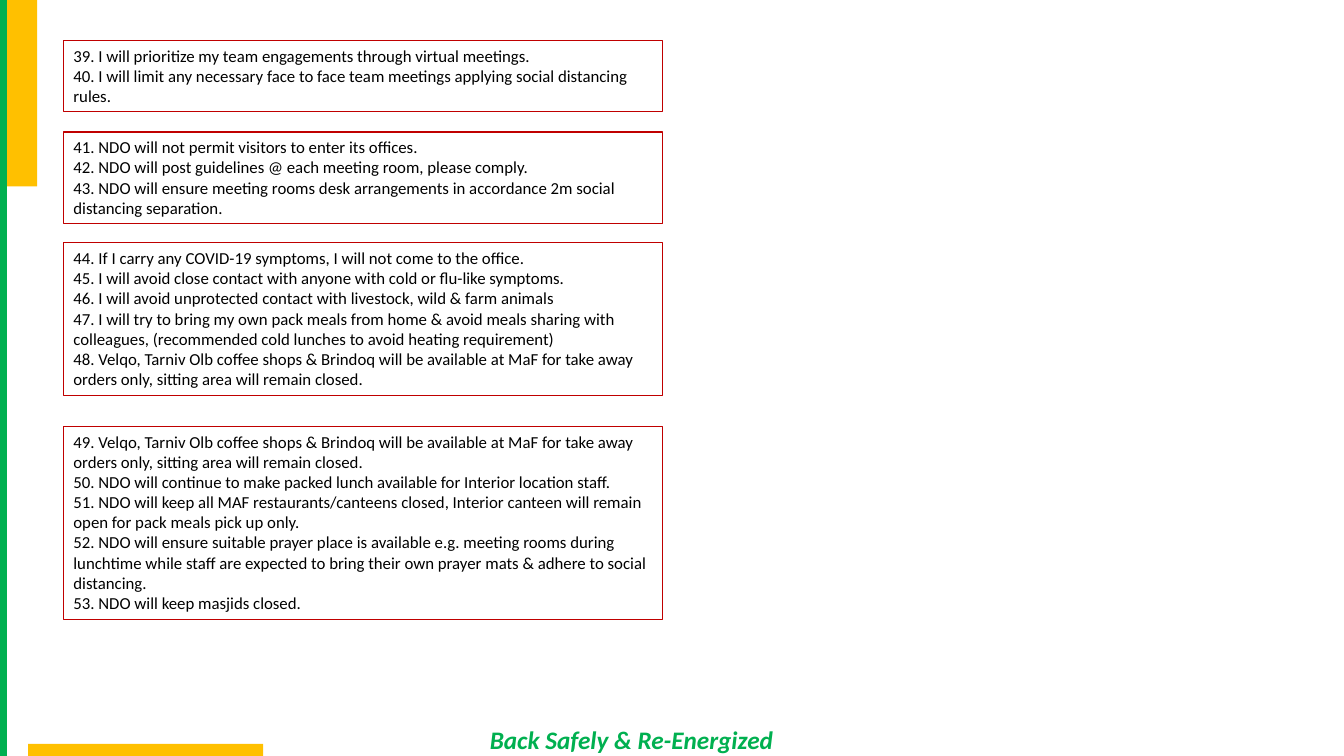
from itertools import count

from pptx import Presentation
from pptx import util as u
from pptx.dml import color
from pptx.enum import shapes, text

COLS, ROWS = 133.3, 75
GREEN, GOLD, RED, BLACK = "00B050", "FFC000", "C00000", "000000"
SHOPS = ("Velqo, Tarniv Olb coffee shops & Brindoq will be available at MaF "
         "for take away orders only, sitting area will remain closed.")
FIRST = 39
RULES = [
    (4, 3, [
        "I will prioritize my team engagements through virtual meetings.",
        "I will limit any necessary face to face team meetings applying "
        "social distancing rules.",
    ]),
    (13.1, 4, [
        "NDO will not permit visitors to enter its offices.",
        "NDO will post guidelines @ each meeting room, please comply.",
        "NDO will ensure meeting rooms desk arrangements in accordance 2m "
        "social distancing separation.",
    ]),
    (24.1, 7, [
        "If I carry any COVID-19 symptoms, I will not come to the office.",
        "I will avoid close contact with anyone with cold or flu-like symptoms.",
        "I will avoid unprotected contact with livestock, wild & farm animals",
        "I will try to bring my own pack meals from home & avoid meals sharing "
        "with colleagues, (recommended cold lunches to avoid heating requirement)",
        SHOPS,
    ]),
    (42.3, 9, [
        SHOPS,
        "NDO will continue to make packed lunch available for Interior "
        "location staff.",
        "NDO will keep all MAF restaurants/canteens closed, Interior canteen "
        "will remain open for pack meals pick up only.",
        "NDO will ensure suitable prayer place is available e.g. meeting rooms "
        "during lunchtime while staff are expected to bring their own prayer "
        "mats & adhere to social distancing.",
        "NDO will keep masjids closed.",
    ]),
]


def rgb(code):
    """Turn a hex string into a colour."""
    return color.RGBColor.from_string(code)


def write(frame, lines, size=12, ink=BLACK, bold=False, italic=False, wrap=True):
    """Fill a text frame with one paragraph per line."""
    frame.word_wrap = wrap
    frame.auto_size = text.MSO_AUTO_SIZE.SHAPE_TO_FIT_TEXT
    frame.vertical_anchor = text.MSO_ANCHOR.TOP
    for i, line in enumerate(lines):
        para = frame.add_paragraph() if i else frame.paragraphs[0]
        para.alignment = text.PP_ALIGN.LEFT
        run = para.add_run()
        run.text = line
        font = run.font
        font.name, font.size = "Calibri", u.Pt(size)
        font.bold, font.italic = bold, italic
        font.color.rgb = rgb(ink)


class Deck:
    """Hold the style and the current slide, measured in columns and rows."""

    def __init__(self):
        """Open a deck with one blank slide."""
        self.prs = Presentation()
        self.prs.slide_width = u.Inches(13.33)
        self.prs.slide_height = u.Inches(7.5)
        self.slide = self.prs.slides.add_slide(self.prs.slide_layouts[6])

    def place(self, col, row, wide, high):
        """Convert grid cells to slide lengths."""
        x = self.prs.slide_width / COLS
        y = self.prs.slide_height / ROWS
        return [round(n) for n in (col * x, row * y, wide * x, high * y)]

    def rect(self, *cell):
        """Add a plain rectangle."""
        shape = self.slide.shapes.add_shape(
            shapes.MSO_SHAPE.RECTANGLE, *self.place(*cell))
        shape.shadow.inherit = False
        return shape

    def bar(self, *cell, fill):
        """Add a solid bar with no outline."""
        bar = self.rect(*cell)
        bar.fill.solid()
        bar.fill.fore_color.rgb = rgb(fill)
        bar.line.fill.background()

    def panel(self, *cell, lines):
        """Add an outlined panel of text."""
        panel = self.rect(*cell)
        panel.fill.background()
        panel.line.color.rgb = rgb(RED)
        panel.line.width = u.Pt(0.75)
        write(panel.text_frame, lines)

    def label(self, *cell, line, **style):
        """Add a single line of free text."""
        box = self.slide.shapes.add_textbox(*self.place(*cell))
        write(box.text_frame, [line], wrap=False, **style)


def main():
    """Build the slide and save it."""
    deck = Deck()
    deck.bar(0, 0, 0.7, ROWS, fill=GREEN)
    deck.bar(0.7, 0, 3, 18.5, fill=GOLD)
    deck.bar(2.8, 73.8, 23.3, 1.2, fill=GOLD)
    deck.label(47.6, 71.4, 30.2, 4, line="Back Safely & Re-Energized",
               size=18, ink=GREEN, bold=True, italic=True)
    num = count(FIRST)
    for top, rows, rules in RULES:
        lines = [f"{next(num)}. {rule}" for rule in rules]
        deck.panel(6.3, top, 59.4, 1 + 2.02 * rows, lines=lines)
    deck.prs.save("out.pptx")


if __name__ == "__main__":
    main()
